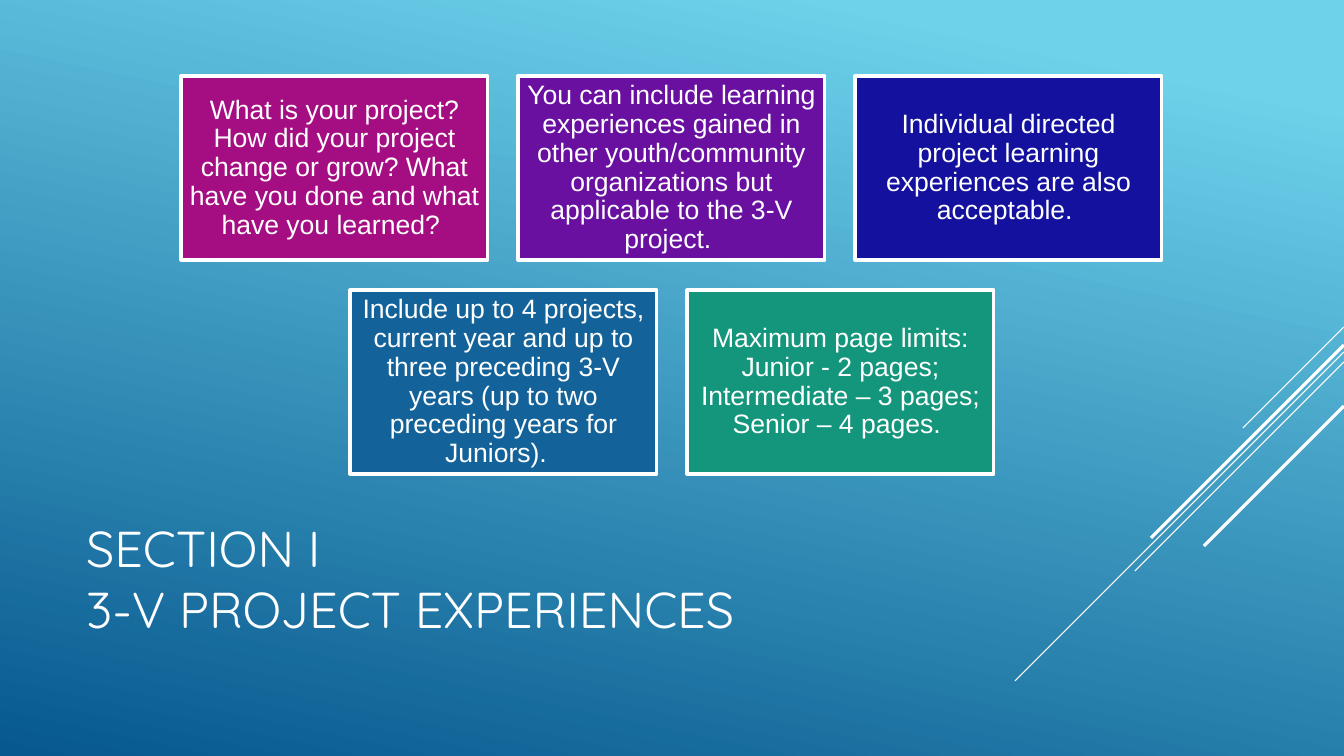
from lxml.etree import SubElement
from pptx import Presentation
from pptx.dml.color import RGBColor
from pptx.enum.shapes import MSO_CONNECTOR, MSO_SHAPE
from pptx.enum.text import MSO_ANCHOR, PP_ALIGN
from pptx.oxml.ns import qn
from pptx.util import Emu, Pt

WIDE, HIGH = 1344, 756
SCALE = 914400 / 100.8
BOX_W, BOX_H, GAP = 307, 184, 30
TOP = 76
WHITE = "FFFFFF"

ROWS = [
    [
        ("A50E82", "What is your project? How did your project change or grow? "
                   "What have you done and what have you learned? "),
        ("6A10A1", "You can include learning experiences gained in other "
                   "youth/community organizations but applicable to the 3-V project. "),
        ("13119D", "Individual directed project learning experiences are also "
                   "acceptable. "),
    ],
    [
        ("13639A", "Include up to 4 projects, current year and up to three "
                   "preceding 3-V years (up to two preceding years for Juniors).  "),
        ("14967C", "Maximum page limits: Junior - 2 pages; Intermediate – 3 pages; "
                   "Senior – 4 pages. "),
    ],
]

STREAKS = [(327, 101, 0.75), (352, 329, 0.75), (362, 209, 0.75),
           (345, 193, 2.25), (406, 140, 2.25)]


def px(count):
    """Turn pixels into EMU."""
    return Emu(round(count * SCALE))


def color(code):
    """Turn a hex string into a colour."""
    return RGBColor.from_string(code)


def add_run(para, text, font, size):
    """Add one white run to a paragraph."""
    run = para.add_run()
    run.text = text
    run.font.name = font
    run.font.size = Pt(size)
    run.font.color.rgb = color(WHITE)


def paint_back(slide):
    """Fill the background with the blue gradient."""
    fill = slide.background.fill
    fill.gradient()
    fill.gradient_angle = 360 - 102
    stops = [(0.1, "6ED2EB"), (1, "06588E")]
    for stop, (place, code) in zip(fill.gradient_stops, stops):
        stop.position = place
        stop.color.rgb = color(code)


def add_streak(slide, top, reach, weight):
    """Draw a diagonal line down from the right edge."""
    line = slide.shapes.add_connector(
        MSO_CONNECTOR.STRAIGHT, px(WIDE), px(top), px(WIDE - reach), px(top + reach))
    line.line.color.rgb = color(WHITE)
    line.line.width = Pt(weight)
    SubElement(line._element.spPr, qn("a:effectLst"))


def add_box(slide, left, top, code, text):
    """Add one coloured box with centred text."""
    box = slide.shapes.add_shape(
        MSO_SHAPE.RECTANGLE, px(left), px(top), px(BOX_W), px(BOX_H))
    box.shadow.inherit = False
    box.fill.solid()
    box.fill.fore_color.rgb = color(code)
    box.line.color.rgb = color(WHITE)
    box.line.width = Pt(2.25)
    frame = box.text_frame
    frame.word_wrap = True
    frame.vertical_anchor = MSO_ANCHOR.MIDDLE
    frame.margin_left = frame.margin_right = px(8)
    frame.margin_top = frame.margin_bottom = px(8)
    para = frame.paragraphs[0]
    para.alignment = PP_ALIGN.CENTER
    para.line_spacing = 0.9
    add_run(para, text, "Arial", 19)


def add_row(slide, top, items):
    """Centre a row of boxes on the slide."""
    step = BOX_W + GAP
    left = (WIDE - len(items) * step + GAP) // 2
    for spot, (code, text) in enumerate(items):
        add_box(slide, left + spot * step, top, code, text)


def set_title(slide, lines):
    """Place the title and write its lines."""
    title = slide.shapes.title
    title.left, title.top = px(76), px(495)
    title.width, title.height = px(940), px(166)
    frame = title.text_frame
    frame.word_wrap = True
    frame.vertical_anchor = MSO_ANCHOR.MIDDLE
    para = frame.paragraphs[0]
    para.alignment = PP_ALIGN.LEFT
    for spot, text in enumerate(lines):
        if spot:
            para.add_line_break()
        add_run(para, text, "Quicksand", 36)


def main():
    """Build the slide and save it."""
    deck = Presentation()
    deck.slide_width, deck.slide_height = px(WIDE), px(HIGH)
    slide = deck.slides.add_slide(deck.slide_layouts[5])
    paint_back(slide)
    for streak in STREAKS:
        add_streak(slide, *streak)
    set_title(slide, ["SECTION I", "3-V PROJECT EXPERIENCES"])
    for spot, items in enumerate(ROWS):
        add_row(slide, TOP + spot * (BOX_H + GAP), items)
    deck.save("out.pptx")


if __name__ == "__main__":
    main()
